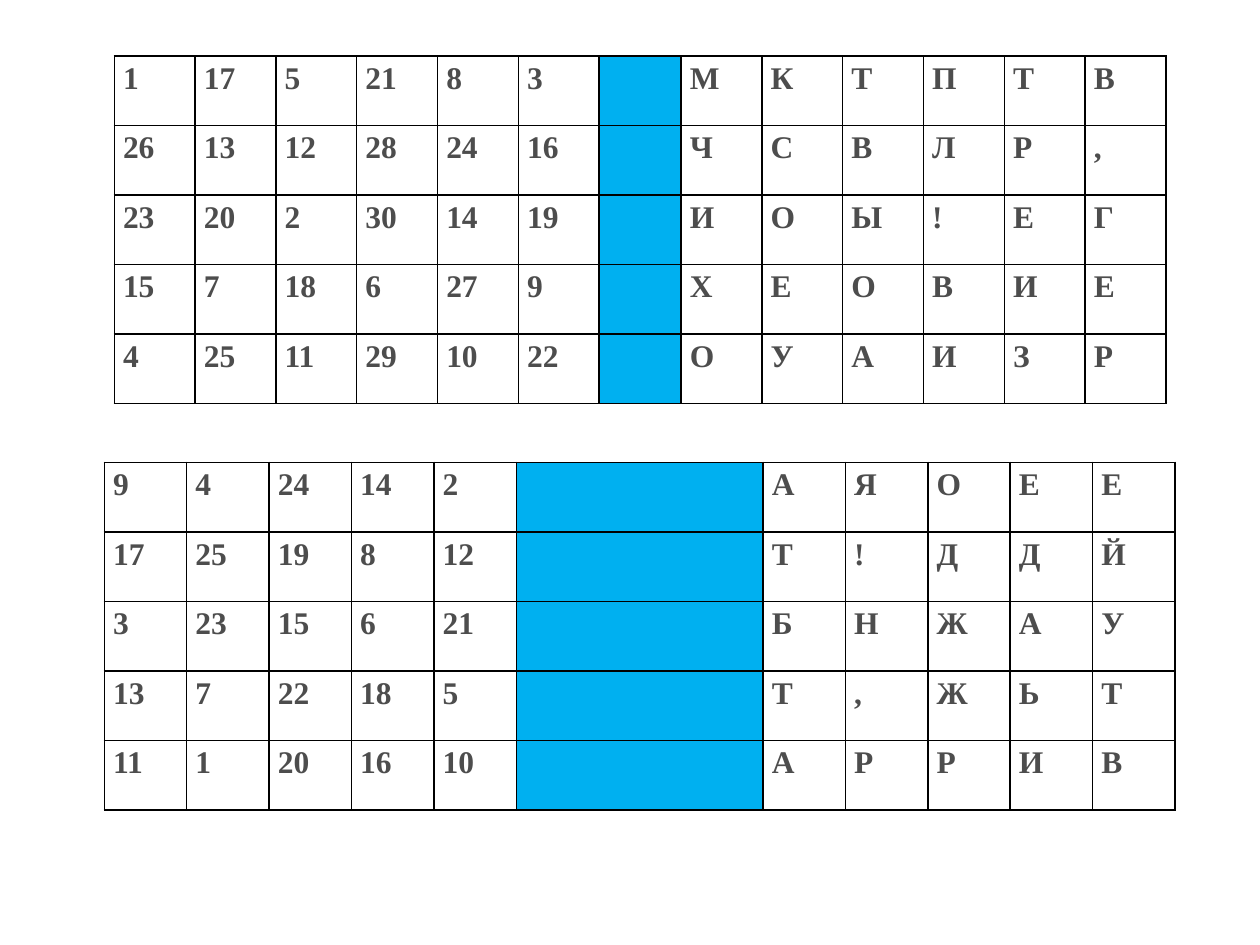
from lxml.etree import SubElement
from pptx import Presentation
from pptx.dml.color import RGBColor
from pptx.oxml.ns import qn
from pptx.util import Pt

ROW = 39.74

# Each row: numbers, then the letters in matching places
TOP = [
    ("1 17 5 21 8 3", "МКТПТВ"),
    ("26 13 12 28 24 16", "ЧСВЛР,"),
    ("23 20 2 30 14 19", "ИОЫ!ЕГ"),
    ("15 7 18 6 27 9", "ХЕОВИЕ"),
    ("4 25 11 29 10 22", "ОУАИЗР"),
]
LOW = [
    ("9 4 24 14 2", "АЯОЕЕ"),
    ("17 25 19 8 12", "Т!ДДЙ"),
    ("3 23 15 6 21", "БНЖАУ"),
    ("13 7 22 18 5", "Т,ЖЬТ"),
    ("11 1 20 16 10", "АРРИВ"),
]


def color(code):
    return RGBColor.from_string(code)


def write(frame, text, size=18, name="Times New Roman", ink="4D4D4D", bold=True):
    para = frame.paragraphs[0]
    para.line_spacing = 1.15
    run = para.add_run()
    run.text = text
    font = run.font
    font.size, font.name, font.bold = Pt(size), name, bold
    font.color.rgb = color(ink)


def border(cell, ink="000000", width=1):
    props = cell._tc.get_or_add_tcPr()
    for side in ("lnL", "lnR", "lnT", "lnB"):
        line = SubElement(props, qn(f"a:{side}"), w=str(Pt(width)))
        fill = SubElement(line, qn("a:solidFill"))
        SubElement(fill, qn("a:srgbClr"), val=ink)


def paint(cell, code):
    cell.fill.solid()
    cell.fill.fore_color.rgb = color(code)


def cipher(slide, left, top, rows, col, gap):
    """Numbers on the left, a blue band, letters on the right."""
    half = len(rows[0][1])
    count = 2 * half + 1
    frame = slide.shapes.add_table(
        len(rows), count, Pt(left), Pt(top),
        Pt(2 * half * col + gap), Pt(ROW * len(rows)))
    table = frame.table
    table.first_row = table.horz_banding = False

    for i, column in enumerate(table.columns):
        column.width = Pt(gap if i == half else col)

    for r, (nums, chars) in enumerate(rows):
        table.rows[r].height = Pt(ROW)
        for c, text in enumerate([*nums.split(), "", *chars]):
            cell = table.cell(r, c)
            cell.margin_left = cell.margin_right = Pt(5)
            cell.margin_top = cell.margin_bottom = Pt(0)
            border(cell)
            paint(cell, "FFFFFF" if text else "00B0F0")
            if text:
                write(cell.text_frame, text)


def main():
    deck = Presentation()
    deck.slide_width, deck.slide_height = Pt(720), Pt(540)
    slide = deck.slides.add_slide(deck.slide_layouts[6])
    cipher(slide, 65.3, 32, TOP, col=46.2, gap=46.8)
    cipher(slide, 59.6, 264.2, LOW, col=47.1, gap=141)
    deck.save("out.pptx")


if __name__ == "__main__":
    main()
